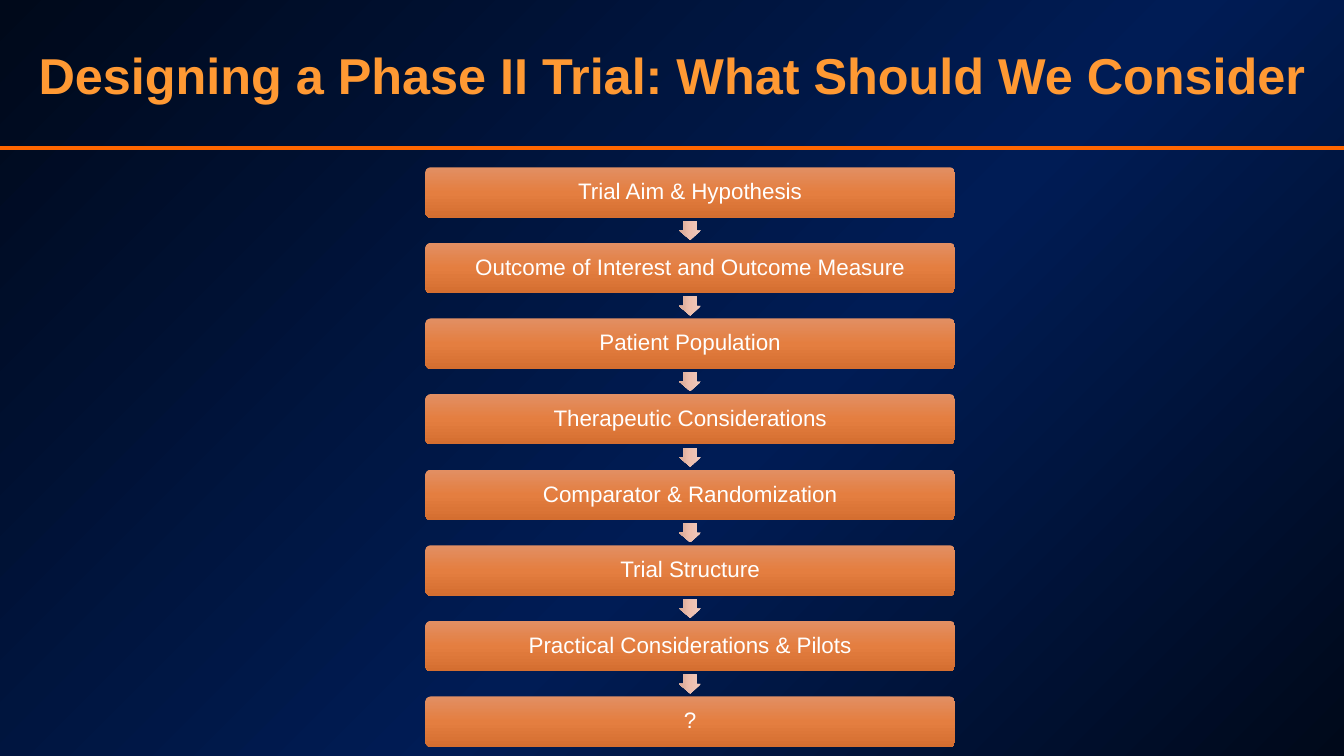
import pptx
import pptx.dml.color
import pptx.enum.shapes
import pptx.enum.text
import pptx.oxml
import pptx.oxml.ns
import pptx.util
from pptx.util import Inches

TITLE = "Designing a Phase II Trial: What Should We Consider"
STEPS = [
    "Trial Aim & Hypothesis",
    "Outcome of Interest and Outcome Measure",
    "Patient Population",
    "Therapeutic Considerations",
    "Comparator & Randomization",
    "Trial Structure",
    "Practical Considerations & Pilots",
    "?",
]
COLORS = {"title": "FF9933", "rule": "FF6600", "step_text": "FFFFFF"}
# Stops as (percent, colour), then the clockwise angle in degrees
GRADIENTS = {
    "background": ([(0, "00091A"), (57, "001C55"), (100, "00091A")], 45),
    "step": ([(0, "E28F63"), (50, "E47E40"), (100, "D46E30")], 90),
    "arrow": ([(0, "EFC9BC"), (50, "EEBFAE"), (100, "D8A896")], 90),
}
FONT = "Arial"
SLIDE_W, SLIDE_H = 13.33, 7.5
RULE_Y = 1.47
STEP_LEFT, STEP_TOP, STEP_W, STEP_H = 4.22, 1.66, 5.25, 0.5
STEP_PITCH = 0.75
STEP_INSET = 0.08
ARROW_LENGTH, ARROW_BREADTH = 0.19, 0.22

SHAPES = pptx.enum.shapes.MSO_SHAPE
ANCHOR = pptx.enum.text.MSO_ANCHOR
qn = pptx.oxml.ns.qn


def rgb(name):
    return pptx.dml.color.RGBColor.from_string(COLORS[name])


def fill_gradient(owner, properties, name):
    """Give a shape or background the named gradient of any number of stops."""
    stops, angle = GRADIENTS[name]
    owner.fill.gradient()
    gradient = properties.find(qn("a:gradFill"))
    stop_xml = "".join(
        f'<a:gs pos="{percent * 1000}"><a:srgbClr val="{color}"/></a:gs>'
        for percent, color in stops
    )
    namespace = pptx.oxml.ns.nsdecls("a")
    gradient.replace(
        gradient.find(qn("a:gsLst")),
        pptx.oxml.parse_xml(f"<a:gsLst {namespace}>{stop_xml}</a:gsLst>"),
    )
    direction = gradient.find(qn("a:lin"))
    direction.set("ang", str(angle * 60000))
    direction.set("scaled", "0")


def write_centred(frame, text, size, color, bold=False):
    frame.text = text
    frame.word_wrap = True
    frame.auto_size = pptx.enum.text.MSO_AUTO_SIZE.NONE
    frame.vertical_anchor = ANCHOR.MIDDLE
    paragraph = frame.paragraphs[0]
    paragraph.alignment = pptx.enum.text.PP_ALIGN.CENTER
    font = paragraph.runs[0].font
    font.name, font.size, font.bold = FONT, pptx.util.Pt(size), bold
    font.color.rgb = rgb(color)
    return paragraph


def add_block(slide, preset, box, gradient, adjustments):
    block = slide.shapes.add_shape(preset, *map(Inches, box))
    block.shadow.inherit = False
    block.line.fill.background()
    fill_gradient(block, block._element.spPr, gradient)
    for index, value in enumerate(adjustments):
        block.adjustments[index] = value
    return block


def add_step(slide, text, top):
    step = add_block(slide, SHAPES.ROUNDED_RECTANGLE,
                     (STEP_LEFT, top, STEP_W, STEP_H), "step", [0.1])
    frame = step.text_frame
    frame.margin_left = frame.margin_right = Inches(STEP_INSET)
    frame.margin_top = frame.margin_bottom = Inches(STEP_INSET)
    write_centred(frame, text, 16, "step_text").line_spacing = 0.9


def add_arrow_below(slide, step_top):
    center_x = STEP_LEFT + STEP_W / 2
    center_y = step_top + (STEP_H + STEP_PITCH) / 2
    box = (center_x - ARROW_LENGTH / 2, center_y - ARROW_BREADTH / 2,
           ARROW_LENGTH, ARROW_BREADTH)
    arrow = add_block(slide, SHAPES.RIGHT_ARROW, box, "arrow", [0.6, 0.5])
    arrow.rotation = 90


def add_rule(slide):
    rule = slide.shapes.add_connector(
        pptx.enum.shapes.MSO_CONNECTOR.STRAIGHT,
        0, Inches(RULE_Y), Inches(SLIDE_W), Inches(RULE_Y))
    rule.line.color.rgb = rgb("rule")
    rule.line.width = pptx.util.Pt(3)
    rule._element.spPr.append(pptx.oxml.parse_xml(
        f'<a:effectLst {pptx.oxml.ns.nsdecls("a")}/>'))


def main():
    deck = pptx.Presentation()
    deck.slide_width, deck.slide_height = Inches(SLIDE_W), Inches(SLIDE_H)
    slide = deck.slides.add_slide(deck.slide_layouts.get_by_name("Title Only"))

    background = slide.background
    background.fill.gradient()
    fill_gradient(background, slide._element.cSld.bg.bgPr, "background")

    title = slide.shapes.title
    title.left, title.top = Inches(0.1), Inches(0.38)
    title.width, title.height = Inches(13.14), Inches(0.71)
    write_centred(title.text_frame, TITLE, 36, "title", bold=True)
    add_rule(slide)

    for index, text in enumerate(STEPS):
        top = STEP_TOP + index * STEP_PITCH
        add_step(slide, text, top)
        if index < len(STEPS) - 1:
            add_arrow_below(slide, top)

    deck.save("out.pptx")


if __name__ == "__main__":
    main()
